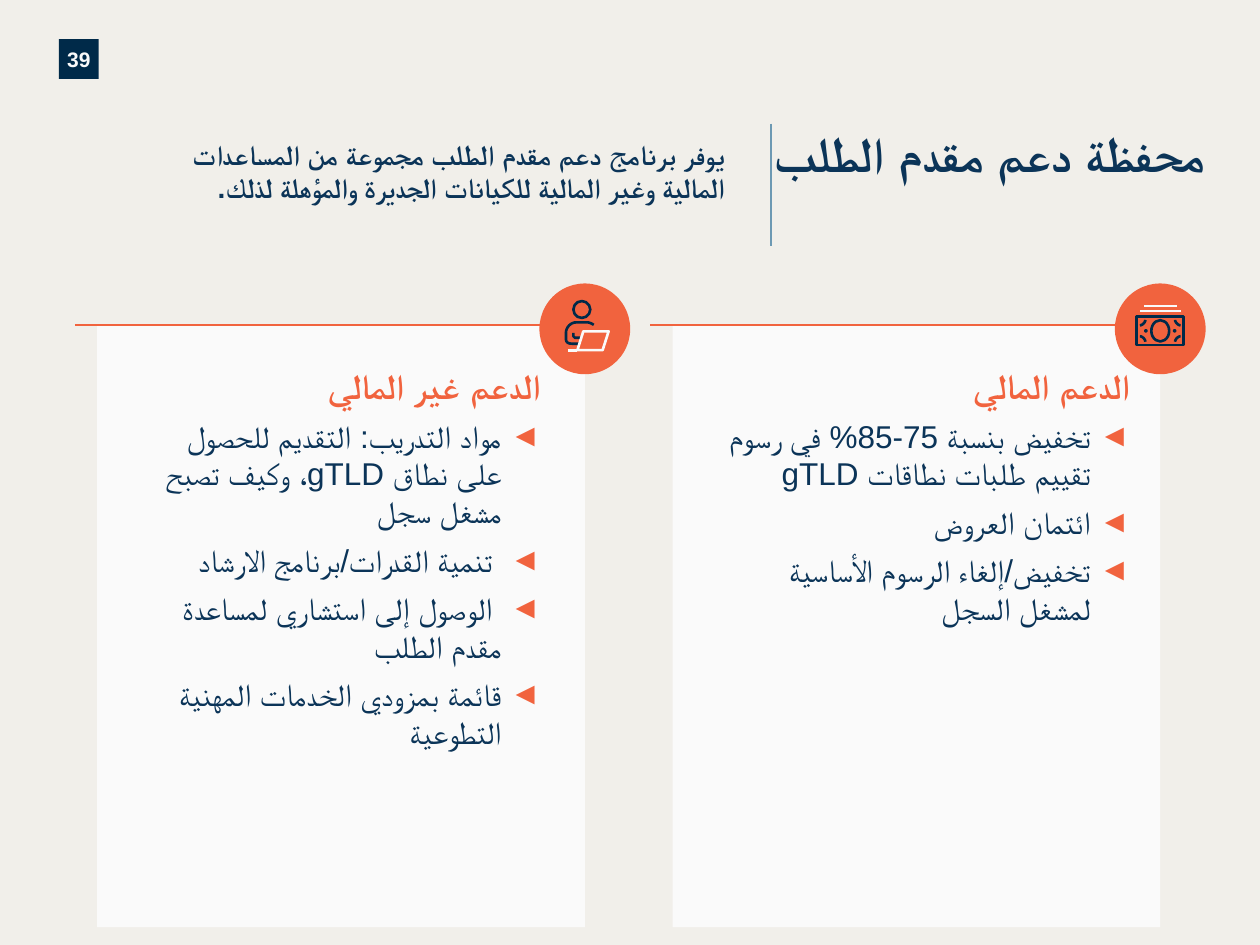
from copy import deepcopy
from dataclasses import dataclass

from lxml import etree
from pptx import Presentation
from pptx.dml.color import RGBColor
from pptx.enum.shapes import MSO_CONNECTOR, MSO_SHAPE
from pptx.enum.text import MSO_ANCHOR, MSO_AUTO_SIZE, PP_ALIGN
from pptx.oxml.ns import qn
from pptx.util import Cm, Pt

PAPER = RGBColor(0xF1, 0xEF, 0xEA)
WHITE = RGBColor(0xFA, 0xFA, 0xFA)
NAVY = RGBColor(0x00, 0x2A, 0x49)
INK = RGBColor(0x0B, 0x34, 0x58)
ORANGE = RGBColor(0xF1, 0x63, 0x3E)
BLUE = RGBColor(0x6D, 0x99, 0xB3)

FONT = "Arial"
CARD_LEFT, CARD_TOP, CARD_W, CARD_H = 1.96, 6.55, 9.83, 12.14
CARD_PITCH = 11.6
RULE_OVERHANG = 0.45
BADGE = 1.83
BADGE_Y = 6.63
INDENT = 0.79


@dataclass(frozen=True)
class Card:
    column: int
    heading: str
    items: tuple[str, ...]
    right_inset: float

    @property
    def left(self) -> float:
        return CARD_LEFT + self.column * CARD_PITCH

    @property
    def right(self) -> float:
        return self.left + CARD_W


CARDS = (
    Card(0, "الدعم غير المالي", (
        "مواد التدريب: التقديم للحصول \nعلى نطاق gTLD، وكيف تصبح مشغل سجل",
        " تنمية القدرات/برنامج الارشاد",
        " الوصول إلى استشاري لمساعدة مقدم الطلب",
        "قائمة بمزودي الخدمات المهنية التطوعية",
    ), 0.89),
    Card(1, "الدعم المالي", (
        "تخفيض بنسبة 75-85% في رسوم تقييم طلبات نطاقات gTLD",
        "ائتمان العروض",
        "تخفيض/إلغاء الرسوم الأساسية \nلمشغل السجل",
    ), 0.61),
)


def set_frame(tf, insets=(0, 0, 0, 0), anchor=MSO_ANCHOR.TOP, auto_size=MSO_AUTO_SIZE.NONE):
    sides = ("margin_left", "margin_top", "margin_right", "margin_bottom")
    settings = dict(zip(sides, map(Cm, insets)))
    settings |= {"word_wrap": True, "vertical_anchor": anchor, "auto_size": auto_size}
    for name, value in settings.items():
        setattr(tf, name, value)


def write(p, text: str, size: float, color: RGBColor, bold: bool = True, rtl: bool = True):
    """Fill a paragraph; a line break takes the format of the text around it."""
    p.text = text
    p.alignment = PP_ALIGN.RIGHT if rtl else PP_ALIGN.CENTER
    if rtl:
        p._p.get_or_add_pPr().set("rtl", "1")
    for r in p.runs:
        r.font.color.rgb = color
        for name, value in {"size": Pt(size), "bold": bold, "name": FONT}.items():
            setattr(r.font, name, value)
        etree.SubElement(r._r.get_or_add_rPr(), qn("a:cs"), typeface=FONT)
    for br in p._p.findall(qn("a:br")):
        br.append(deepcopy(p.runs[0]._r.rPr))


def set_bullet(p, char: str = ""):
    """Give the paragraph a hanging bullet, or none when char is empty."""
    pPr = p._p.get_or_add_pPr()
    indent = Cm(INDENT) if char else 0
    pPr.set("marL", str(indent))
    pPr.set("indent", str(-indent))
    p.space_before = Pt(6 if char else 0)
    if char:
        color = etree.SubElement(pPr, qn("a:buClr"))
        etree.SubElement(color, qn("a:srgbClr"), val=str(ORANGE))
        etree.SubElement(pPr, qn("a:buChar"), char=char)
    else:
        etree.SubElement(pPr, qn("a:buNone"))


def place(sp, left: float, top: float, width: float, height: float):
    sp.left, sp.top, sp.width, sp.height = map(Cm, (left, top, width, height))


def add_line(shapes, x1: float, y1: float, x2: float, y2: float,
             color: RGBColor, width: float = 1.25):
    line = shapes.add_connector(MSO_CONNECTOR.STRAIGHT, *map(Cm, (x1, y1, x2, y2)))
    line.line.color.rgb = color
    line.line.width = Pt(width)
    etree.SubElement(line._element.spPr, qn("a:effectLst"))


def style(sp, fill: RGBColor | None = None, outline: RGBColor | None = None):
    sp.shadow.inherit = False
    for part, color in ((sp.fill, fill), (sp.line.fill, outline)):
        if color is None:
            part.background()
        else:
            part.solid()
            part.fore_color.rgb = color
    if outline is not None:
        sp.line.width = Pt(1.5)


def add_centred(shapes, kind, cx: float, cy: float, width: float, height: float, **colors):
    sp = shapes.add_shape(kind, *map(Cm, (cx - width / 2, cy - height / 2, width, height)))
    style(sp, **colors)
    return sp


def add_path(shapes, cx: float, cy: float, start, segments, color: RGBColor, close=False):
    """Draw segments of 2 numbers (a line) or 6 (a Bézier curve) around a centre."""
    points = [start]
    for *controls, x, y in segments:
        if not controls:
            points.append((x, y))
            continue
        x0, y0 = points[-1]
        x1, y1, x2, y2 = controls
        for t in (i / 8 for i in range(1, 9)):
            a, b, c, d = (1 - t) ** 3, 3 * t * (1 - t) ** 2, 3 * t * t * (1 - t), t ** 3
            points.append((a * x0 + b * x1 + c * x2 + d * x, a * y0 + b * y1 + c * y2 + d * y))
    first, *rest = [(Cm(cx + x), Cm(cy + y)) for x, y in points]
    builder = shapes.build_freeform(*first)
    builder.add_line_segments(rest, close=close)
    style(builder.convert_to_shape(), outline=color)


def draw_person(shapes, cx: float, cy: float):
    add_centred(shapes, MSO_SHAPE.OVAL, cx - 0.06, cy - 0.39, 0.34, 0.34, outline=NAVY)
    arm = [(-0.2, 0.18), (-0.23, 0.15), (-0.23, 0.08)]
    body = [(0.15, -0.1, 0.1, -0.13, 0.05, -0.13), (-0.18, -0.13),
            (-0.28, -0.13, -0.38, -0.03, -0.38, 0.08), (-0.38, 0.2),
            (-0.38, 0.28, -0.33, 0.3, -0.25, 0.3), (-0.1, 0.3)]
    laptop = [(-0.15, 0.43), (0.36, 0.43), (0.48, 0.05)]
    add_path(shapes, cx, cy, (-0.08, 0.18), arm, NAVY)
    add_path(shapes, cx, cy, (0.18, -0.08), body, NAVY)
    add_line(shapes, cx - 0.15, cy + 0.43, cx - 0.33, cy + 0.43, WHITE, 1.5)
    add_path(shapes, cx, cy, (-0.03, 0.05), laptop, WHITE, close=True)


def draw_banknotes(shapes, cx: float, cy: float):
    note_y = cy + 0.04
    add_centred(shapes, MSO_SHAPE.RECTANGLE, cx, note_y, 0.95, 0.58, outline=NAVY)
    add_centred(shapes, MSO_SHAPE.OVAL, cx, note_y, 0.36, 0.43, outline=NAVY)
    for sx in (-1, 1):
        add_centred(shapes, MSO_SHAPE.OVAL, cx + sx * 0.29, note_y, 0.02, 0.02, outline=NAVY)
        for sy in (-1, 1):
            corner = (sx * 0.36, sy * 0.11, sx * 0.3, sy * 0.17, sx * 0.3, sy * 0.22)
            add_path(shapes, cx, note_y, (sx * 0.41, sy * 0.11), [corner], NAVY)
    for half, rise in ((0.41, 0.36), (0.33, 0.46)):
        add_line(shapes, cx - half, cy - rise, cx + half, cy - rise, WHITE, 1.5)


def fill_card(sp, card: Card):
    place(sp, card.left, CARD_TOP, CARD_W, CARD_H)
    sp.fill.solid()
    sp.fill.fore_color.rgb = WHITE
    tf = sp.text_frame
    set_frame(tf, (INDENT, INDENT, card.right_inset, INDENT))
    write(tf.paragraphs[0], card.heading, 20, ORANGE)
    set_bullet(tf.paragraphs[0])
    for item in card.items:
        p = tf.add_paragraph()
        write(p, item, 18, INK, bold=False)
        set_bullet(p, "◄")


def main():
    prs = Presentation()
    prs.slide_width, prs.slide_height = Cm(25.4), Cm(19.05)
    slide = prs.slides.add_slide(prs.slide_layouts[3])
    slide.background.fill.solid()
    slide.background.fill.fore_color.rgb = PAPER
    shapes = slide.shapes

    title, *bodies = slide.placeholders
    place(title, 15.34, 2.49, 8.97, 2.34)
    set_frame(title.text_frame)
    write(title.text_frame.paragraphs[0], "محفظة دعم مقدم الطلب", 28, INK)

    number = add_centred(shapes, MSO_SHAPE.RECTANGLE, 1.59, 1.19, 0.8, 0.8, fill=NAVY)
    set_frame(number.text_frame, anchor=MSO_ANCHOR.MIDDLE)
    write(number.text_frame.paragraphs[0], "39", 12, WHITE, rtl=False)

    intro = shapes.add_textbox(*map(Cm, (2.64, 2.77, 11.97, 1.37)))
    set_frame(intro.text_frame, auto_size=MSO_AUTO_SIZE.SHAPE_TO_FIT_TEXT)
    write(intro.text_frame.paragraphs[0], "يوفر برنامج دعم مقدم الطلب مجموعة من المساعدات "
          "المالية وغير المالية للكيانات الجديرة والمؤهلة لذلك.", 16, INK)
    add_line(shapes, 15.54, 2.49, 15.54, 4.95, BLUE)

    for card, body, draw_icon in zip(CARDS, bodies, (draw_person, draw_banknotes)):
        fill_card(body, card)
        add_line(shapes, card.left - RULE_OVERHANG, CARD_TOP, card.right, CARD_TOP, ORANGE)
        add_centred(shapes, MSO_SHAPE.OVAL, card.right, BADGE_Y, BADGE, BADGE, fill=ORANGE)
        draw_icon(shapes, card.right, BADGE_Y)

    prs.save("out.pptx")


if __name__ == "__main__":
    main()
